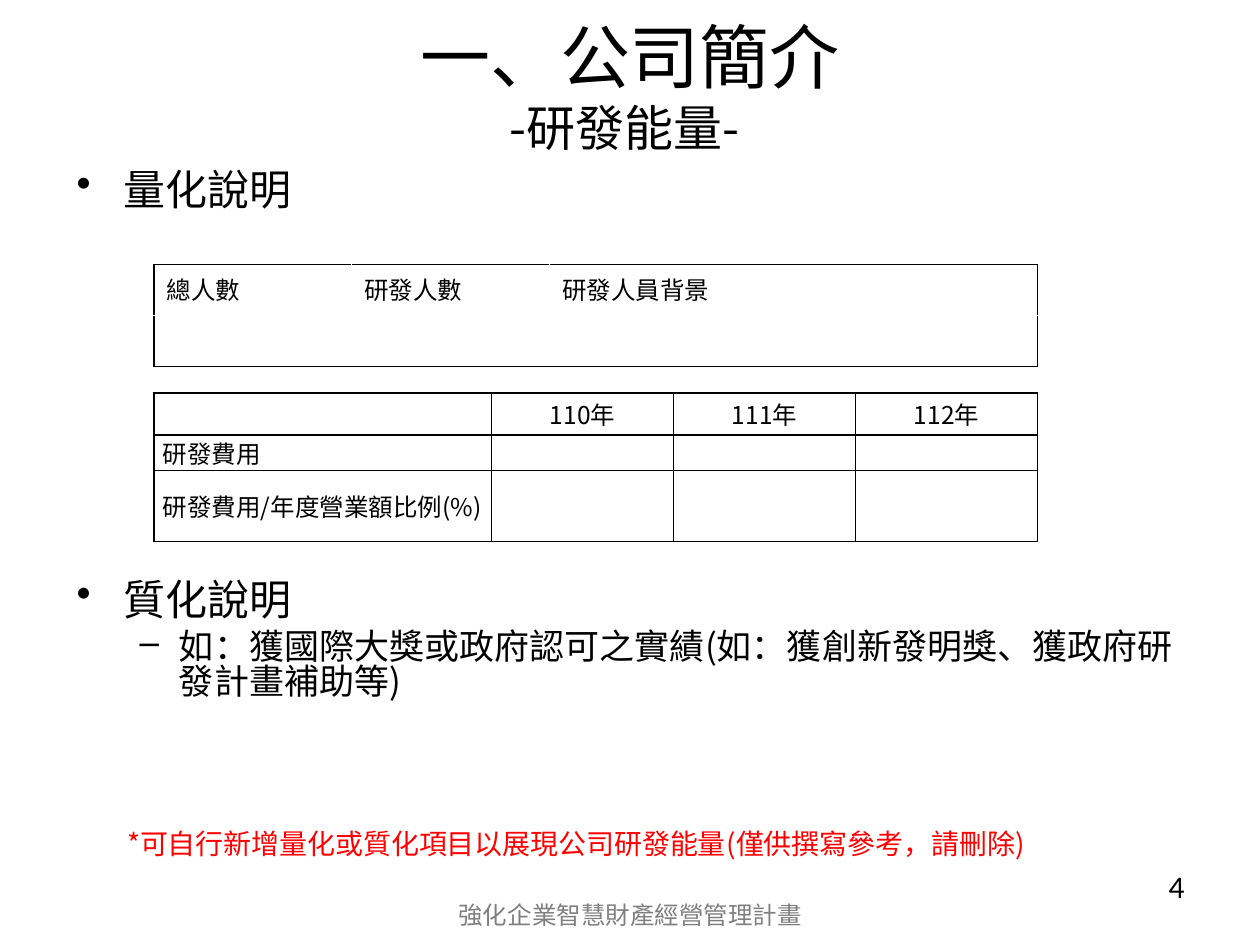
"""Build the company profile slide on research and development capacity."""
import pptx
import pptx.dml.color
import pptx.enum.text
import pptx.oxml
import pptx.oxml.ns
import pptx.util

Pt = pptx.util.Pt
ALIGN = pptx.enum.text.PP_ALIGN
ANCHOR = pptx.enum.text.MSO_ANCHOR
CJK = "Noto Sans CJK SC"
BLACK, GREY, RED = "000000", "7F7F7F", "FF0000"

TITLE = [("一、公司簡介", 40), ("-研發能量- ", 28)]
SECTIONS = [
    (94.5, [("量化說明", 0)]),
    (328.8, [("質化說明", 0),
             ("如：獲國際大獎或政府認可之實績(如：獲創新發明獎、獲政府研發計畫補助等)", 1)]),
]
BULLETS = [("•", 24, 27, 27, 0), ("–", 20, 58.5, 22.5, 5)]
STAFF = [["總人數", "研發人數", "研發人員背景"], [""] * 3]
SPENDING = [
    ["", "110年", "111年", "112年"],
    ["研發費用", "", "", ""],
    ["研發費用/年度營業額比例(%)", "", "", ""],
]
NOTES = [
    ("*可自行新增量化或質化項目以展現公司研發能量(僅供撰寫參考，請刪除)",
     (65.5, 468.7, 544.5, 26.6), 16, RED, ALIGN.LEFT, CJK),
    ("強化企業智慧財產經營管理計畫", (246, 510.5, 228.5, 37.5), 14, GREY, ALIGN.CENTER, CJK),
    ("4", (516, 492, 168, 37.5), 18, BLACK, ALIGN.RIGHT, "Calibri"),
]


def rgb(value):
    return pptx.dml.color.RGBColor.from_string(value)


def style(font, size, color=BLACK, name=CJK):
    font.size, font.name = Pt(size), name
    font.color.rgb = rgb(color)
    east = pptx.oxml.parse_xml(
        f'<a:ea {pptx.oxml.ns.nsdecls("a")} typeface="{CJK}"/>')
    font._element.find(pptx.oxml.ns.qn("a:latin")).addnext(east)


def add_box(page, place, anchor=ANCHOR.TOP):
    frame = page.shapes.add_textbox(*map(Pt, place)).text_frame
    frame.word_wrap = True
    frame.vertical_anchor = anchor
    return frame


def add_title(page):
    para = add_box(page, (36, 3.6, 648, 90), ANCHOR.MIDDLE).paragraphs[0]
    para.alignment = ALIGN.CENTER
    for index, (text, size) in enumerate(TITLE):
        if index:
            para.add_line_break()
        span = para.add_run()
        span.text = text
        style(span.font, size)


def add_section(page, top, lines):
    frame = add_box(page, (36.7, top, 648, 100))
    for index, (text, level) in enumerate(lines):
        para = frame.add_paragraph() if index else frame.paragraphs[0]
        mark, size, margin, hanging, before = BULLETS[level]
        para.text, para.level = text, level
        para.space_before, para.line_spacing = Pt(before), 0.83
        style(para.font, size)
        props = para._p.get_or_add_pPr()
        props.set("marL", str(Pt(margin)))
        props.set("indent", str(Pt(-hanging)))
        bullet = pptx.oxml.parse_xml(
            f'<a:buChar {pptx.oxml.ns.nsdecls("a")} char="{mark}"/>')
        props.find(pptx.oxml.ns.qn("a:defRPr")).addprevious(bullet)


def set_borders(cell, sides):
    props = cell._tc.get_or_add_tcPr()
    for index, side in enumerate(side for side in "LRTB" if side in sides):
        props.insert(index, pptx.oxml.parse_xml(
            f'<a:ln{side} {pptx.oxml.ns.nsdecls("a")} w="{Pt(1)}">'
            f'<a:solidFill><a:srgbClr val="{BLACK}"/></a:solidFill></a:ln{side}>'))


def add_table(page, top, rows, widths, heights, grid):
    table = page.shapes.add_table(
        len(rows), len(widths), Pt(88), Pt(top), Pt(sum(widths)), Pt(sum(heights))).table
    table.first_row = table.horz_banding = False
    for column, width in zip(table.columns, widths):
        column.width = Pt(width)
    for row, height in zip(table.rows, heights):
        row.height = Pt(height)
    for r, row in enumerate(rows):
        for c, text in enumerate(row):
            cell = table.cell(r, c)
            para = cell.text_frame.paragraphs[0]
            para.text = text
            style(para.font, 14)
            cell.fill.background()
            edges = {"L": c == 0, "R": c == len(row) - 1,
                     "T": r == 0, "B": r == len(rows) - 1}
            set_borders(cell, [side for side, outer in edges.items() if outer or grid])
            if grid:
                cell.margin_left = cell.margin_right = Pt(5)
                cell.margin_top = cell.margin_bottom = 0
                cell.vertical_anchor = ANCHOR.MIDDLE
                para.alignment = ALIGN.JUSTIFY if c == 0 else ALIGN.CENTER
                para.space_before = Pt(0 if r else 3.6)


def main():
    deck = pptx.Presentation()
    deck.slide_width, deck.slide_height = Pt(720), Pt(540)
    page = deck.slides.add_slide(deck.slide_layouts[6])
    add_title(page)
    for top, lines in SECTIONS:
        add_section(page, top, lines)
    add_table(page, 224.6, SPENDING, [193] + [104] * 3, [24, 20.4, 40.6], True)
    add_table(page, 151, STAFF, [113, 113, 279], [29.2] * 2, False)
    for text, place, size, color, alignment, name in NOTES:
        para = add_box(page, place).paragraphs[0]
        para.text, para.alignment = text, alignment
        style(para.font, size, color, name)
    deck.save("out.pptx")


if __name__ == "__main__":
    main()
